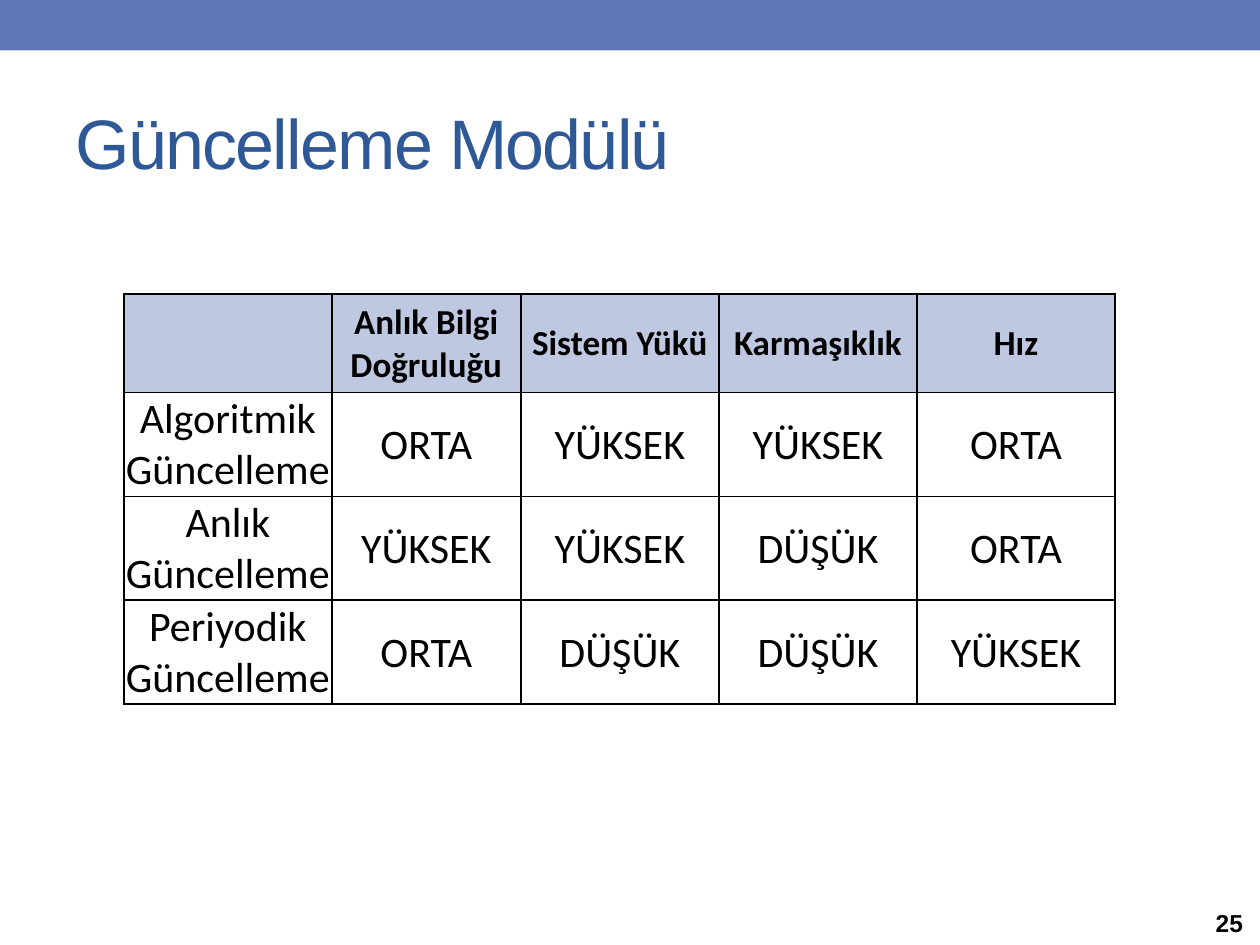
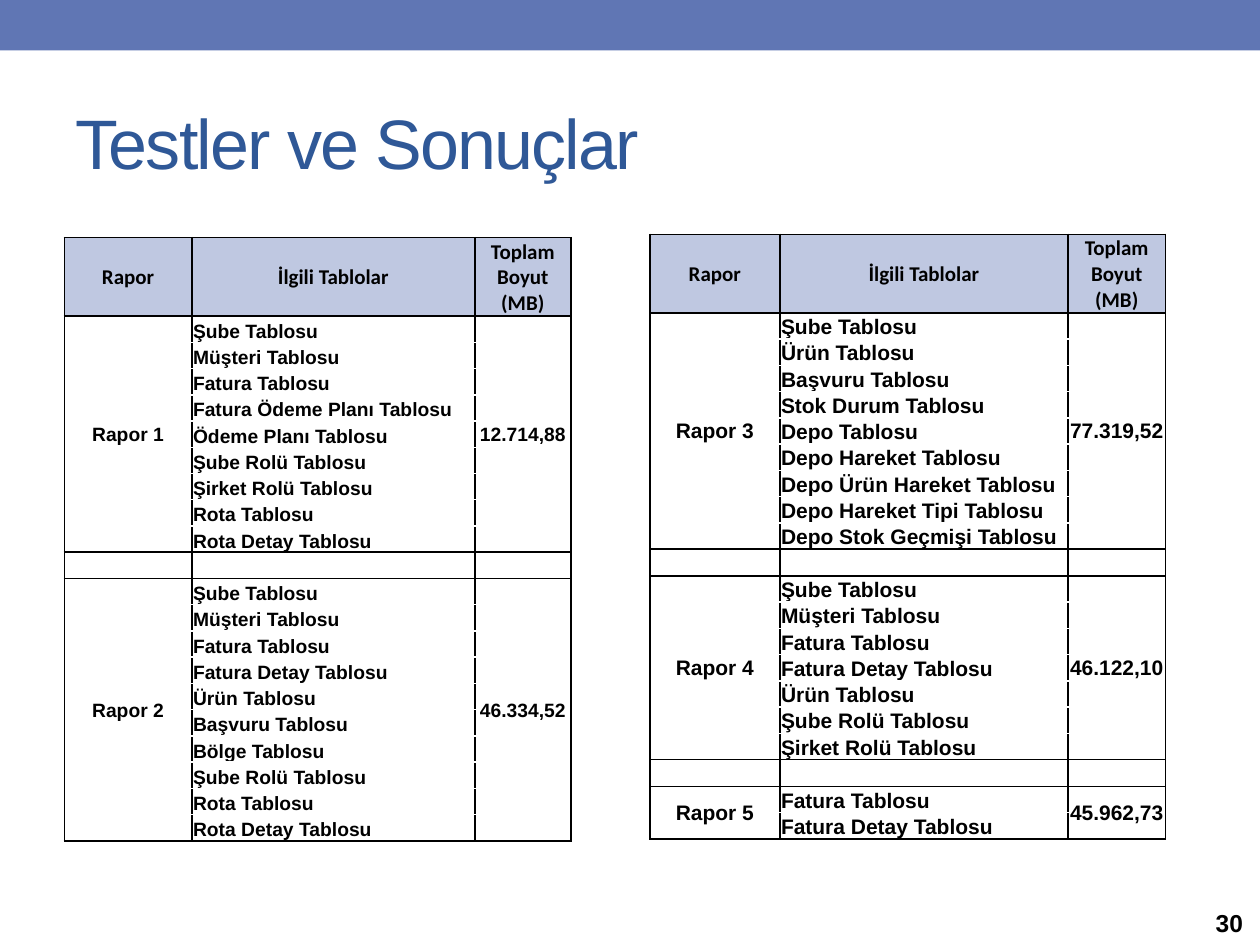
from lxml import etree
from pptx import Presentation
from pptx.dml.color import RGBColor
from pptx.enum.shapes import MSO_SHAPE
from pptx.enum.text import MSO_ANCHOR, MSO_AUTO_SIZE, PP_ALIGN
from pptx.oxml.ns import qn
from pptx.util import Pt

RECT = MSO_SHAPE.RECTANGLE
MIDDLE, BOTTOM = MSO_ANCHOR.MIDDLE, MSO_ANCHOR.BOTTOM
LEFT, CENTER = PP_ALIGN.LEFT, PP_ALIGN.CENTER
FIXED = MSO_AUTO_SIZE.NONE

HUES = {"band": "6076B4", "title": "2F5897", "head": "BFC8E1",
        "ink": "000000", "paper": "FFFFFF"}
TITLE = {"name": "Arial", "size": Pt(40), "bold": False}
PAGE = {"name": "Arial", "size": Pt(14), "bold": True}
INSET = {"margin_left": Pt(0.72), "margin_right": Pt(0.72),
         "margin_top": Pt(0.72), "margin_bottom": Pt(0)}
FRAME = {"word_wrap": True, "auto_size": FIXED, "vertical_anchor": MIDDLE}
PLAIN = {"first_row": False, "horz_banding": False}

MODES = [
    ["", "Anlık Bilgi Doğruluğu", "Sistem Yükü", "Karmaşıklık", "Hız"],
    ["Algoritmik Güncelleme", "ORTA", "YÜKSEK", "YÜKSEK", "ORTA"],
    ["Anlık Güncelleme", "YÜKSEK", "YÜKSEK", "DÜŞÜK", "ORTA"],
    ["Periyodik Güncelleme", "ORTA", "DÜŞÜK", "DÜŞÜK", "YÜKSEK"],
]
HEADS = ["Rapor", "İlgili Tablolar", "Toplam Boyut (MB)"]
FIRST = [
    ("Rapor 1", "12.714,88", ["Şube", "Müşteri", "Fatura", "Fatura Ödeme Planı",
     "Ödeme Planı", "Şube Rolü", "Şirket Rolü", "Rota", "Rota Detay"]),
    ("Rapor 2", "46.334,52", ["Şube", "Müşteri", "Fatura", "Fatura Detay", "Ürün",
     "Başvuru", "Bölge", "Şube Rolü", "Rota", "Rota Detay"]),
]
SECOND = [
    ("Rapor 3", "77.319,52", ["Şube", "Ürün", "Başvuru", "Stok Durum", "Depo",
     "Depo Hareket", "Depo Ürün Hareket", "Depo Hareket Tipi",
     "Depo Stok Geçmişi"]),
    ("Rapor 4", "46.122,10", ["Şube", "Müşteri", "Fatura", "Fatura Detay", "Ürün",
     "Şube Rolü", "Şirket Rolü"]),
    ("Rapor 5", "45.962,73", ["Fatura", "Fatura Detay"]),
]


def put(item, form):
    """Set each attribute named in the format."""
    for key, value in form.items():
        setattr(item, key, value)


def tint(hue):
    """Give the colour with this name."""
    return RGBColor.from_string(HUES[hue])


def write(frame, text, font, hue="ink", align=LEFT):
    """Write one formatted line and return its run."""
    line = frame.paragraphs[0]
    line.alignment = align
    run = line.add_run()
    run.text = text
    put(run.font, font)
    run.font.color.rgb = tint(hue)
    return run


def edge(cell, top="ink", bottom="ink"):
    """Rule the four sides of a cell."""
    sides = {"a:lnL": "ink", "a:lnR": "ink", "a:lnT": top, "a:lnB": bottom}
    props = cell._tc.get_or_add_tcPr()
    for spot, (tag, hue) in enumerate(sides.items()):
        line = etree.Element(qn(tag), w=str(Pt(1)))
        fill = etree.SubElement(line, qn("a:solidFill"))
        etree.SubElement(fill, qn("a:srgbClr"), val=HUES[hue])
        props.insert(spot, line)


def fill(cell, text, font, hue="paper", align=CENTER, anchor=MIDDLE):
    """Colour a cell and write its text."""
    put(cell, {**INSET, "vertical_anchor": anchor})
    cell.fill.solid()
    cell.fill.fore_color.rgb = tint(hue)
    if text:
        write(cell.text_frame, text, font, align=align)
    else:
        line = cell.text_frame.paragraphs[0]._p
        etree.SubElement(line, qn("a:endParaRPr"), sz=str(int(font["size"].pt * 100)))


def grid(slide, left, top, cols, rows):
    """Add a plain table with these column widths and row heights."""
    box = [Pt(n) for n in (left, top, sum(cols), sum(rows))]
    table = slide.shapes.add_table(len(rows), len(cols), *box).table
    put(table, PLAIN)
    for col, width in zip(table.columns, cols):
        col.width = Pt(width)
    for row, height in zip(table.rows, rows):
        row.height = Pt(height)
    return table


def matrix(slide, left, top):
    """Compare the update modes."""
    table = grid(slide, left, top, [118.8, 108] + [113.2] * 3, [56.2] + [59.4] * 3)
    for r, row in enumerate(MODES):
        font = {"name": "Calibri", "size": Pt(24 if r else 20), "bold": not r}
        for c, text in enumerate(row):
            cell = table.cell(r, c)
            fill(cell, text, font, "paper" if r else "head")
            edge(cell)


def group(table, start, report, font):
    """Fill the rows of one report."""
    name, size, parts = report
    last = len(parts) - 1
    for n, part in enumerate(parts):
        texts = ["" if n else name, f"{part} Tablosu", "" if n else size]
        for c, text in enumerate(texts):
            cell = table.cell(start + n, c)
            form = {"align": LEFT, "anchor": BOTTOM} if c == 1 else {}
            fill(cell, text, font, **form)
            whole = c != 1 and n == 0
            edge(cell, "paper" if n else "ink",
                 "ink" if whole or n == last else "paper")
    for c in (0, 2):
        table.cell(start, c).merge(table.cell(start + last, c))


def sizes(slide, left, top, cols, reports, size):
    """List the tables and total size of each report."""
    count = sum(len(parts) + 1 for _, _, parts in reports) - 1
    table = grid(slide, left, top, cols, [44.8] + [15] * count)
    font = {"name": "Arial", "size": Pt(size), "bold": True}
    for c, text in enumerate(HEADS):
        cell = table.cell(0, c)
        fill(cell, text, {**font, "name": "Calibri", "size": Pt(12)}, "head")
        edge(cell)
    start = 1
    for n, report in enumerate(reports):
        if n:
            for c in range(len(cols)):
                cell = table.cell(start, c)
                fill(cell, "", font)
                edge(cell)
            start += 1
        group(table, start, report, font)
        start += len(report[2])


def base(deck, title, page):
    """Add a slide with its band, title and page number."""
    slide = deck.slides.add_slide(deck.slide_layouts[5])
    band = slide.shapes.add_shape(RECT, 0, 0, deck.slide_width, Pt(28.8))
    band.shadow.inherit = False
    band.fill.solid()
    band.fill.fore_color.rgb = tint("band")
    band.line.fill.background()
    head = slide.shapes.title
    put(head, {"left": Pt(36), "top": Pt(42), "width": Pt(648), "height": Pt(78)})
    put(head.text_frame, FRAME)
    run = write(head.text_frame, title, TITLE, "title")
    run.font._element.set("spc", "-100")
    foot = slide.shapes.add_textbox(Pt(687.6), Pt(514), Pt(32.4), Pt(26))
    put(foot.text_frame, FRAME)
    write(foot.text_frame, page, PAGE)
    return slide


def main():
    """Build and save both slides."""
    deck = Presentation()
    put(deck, {"slide_width": Pt(720), "slide_height": Pt(540)})
    matrix(base(deck, "Güncelleme Modülü", "25"), 70.8, 168)
    slide = base(deck, "Testler ve Sonuçlar", "30")
    sizes(slide, 36.8, 135.8, [72.8, 161.8, 54.8], FIRST, 11)
    sizes(slide, 371.4, 134, [74.2, 164.8, 55.6], SECOND, 12)
    deck.save("out.pptx")


if __name__ == "__main__":
    main()
